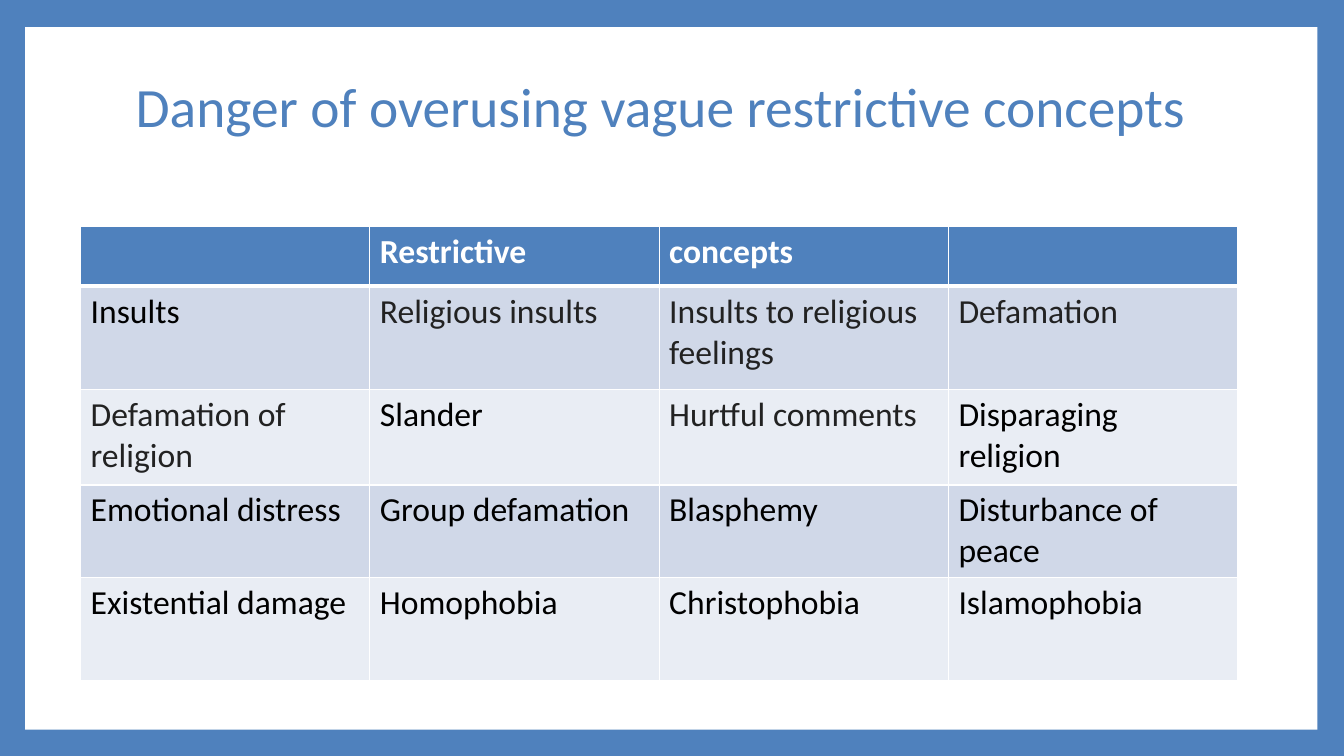
from dataclasses import dataclass

from lxml.etree import SubElement
from pptx import Presentation
from pptx.dml.color import RGBColor
from pptx.enum.shapes import MSO_SHAPE
from pptx.enum.text import MSO_ANCHOR, PP_ALIGN
from pptx.oxml.ns import qn
from pptx.slide import Slide
from pptx.table import _Cell
from pptx.util import Pt

BLUE = RGBColor(0x4F, 0x81, 0xBD)
WHITE = RGBColor(0xFF, 0xFF, 0xFF)
BLACK = RGBColor(0x00, 0x00, 0x00)
CHARCOAL = RGBColor(0x22, 0x22, 0x22)
BAND_DARK = RGBColor(0xD0, 0xD8, 0xE8)
BAND_LIGHT = RGBColor(0xE9, 0xED, 0xF4)
FONT = "Calibri"
COLUMN_WIDTH = 206.64


@dataclass(frozen=True)
class ConceptRow:
    height: float
    fill: RGBColor
    concepts: tuple[str, ...]


ROWS = (
    ConceptRow(42.5, BLUE, ("", "Restrictive", "concepts", "")),
    ConceptRow(74, BAND_DARK, ("Insults", "Religious insults",
                               "Insults to religious feelings", "Defamation")),
    ConceptRow(68, BAND_LIGHT, ("Defamation of religion", "Slander",
                                "Hurtful comments", "Disparaging religion")),
    ConceptRow(66, BAND_DARK, ("Emotional distress", "Group defamation",
                               "Blasphemy", "Disturbance of peace")),
    ConceptRow(74, BAND_LIGHT, ("Existential damage", "Homophobia",
                                "Christophobia", "Islamophobia")),
)
CHARCOAL_CONCEPTS = {
    "Religious insults", "Insults to religious feelings", "Defamation",
    "Defamation of religion", "Hurtful comments",
}


def add_title(page: Slide) -> None:
    title = page.shapes.title
    title.left, title.top = Pt(90), Pt(48)
    title.width, title.height = Pt(777.6), Pt(106.6)
    frame = title.text_frame
    frame.text = "Danger of overusing vague restrictive concepts"
    frame.word_wrap = True
    frame.vertical_anchor = MSO_ANCHOR.MIDDLE
    frame.margin_left, frame.margin_right = Pt(0), Pt(14)
    frame.margin_bottom = Pt(50)
    para = frame.paragraphs[0]
    para.alignment = PP_ALIGN.CENTER
    para.line_spacing = 0.9
    para.font.name = FONT
    para.font.size = Pt(39.6)
    para.font.color.rgb = BLUE


def add_panel(page: Slide) -> None:
    panel = page.shapes.add_shape(
        MSO_SHAPE.RECTANGLE, Pt(18), Pt(19.4), Pt(923), Pt(501.8))
    panel.shadow.inherit = False
    panel.fill.solid()
    panel.fill.fore_color.rgb = WHITE
    panel.line.fill.background()
    page.shapes.title.element.addprevious(panel.element)


def set_borders(cell: _Cell, top: float, bottom: float) -> None:
    properties = cell._tc.get_or_add_tcPr()
    for side, width in (("L", 1), ("R", 1), ("T", top), ("B", bottom)):
        line = SubElement(properties, qn(f"a:ln{side}"), w=str(Pt(width)))
        fill = SubElement(line, qn("a:solidFill"))
        SubElement(fill, qn("a:srgbClr"), val=str(WHITE))


def fill_cell(cell: _Cell, concept: str, row_index: int) -> None:
    is_header = row_index == 0
    set_borders(cell, 3 if row_index == 1 else 1, 3 if is_header else 1)
    cell.fill.solid()
    cell.fill.fore_color.rgb = ROWS[row_index].fill
    cell.text = concept
    font = cell.text_frame.paragraphs[0].font
    font.name = FONT
    font.size = Pt(24)
    font.bold = is_header
    if is_header:
        font.color.rgb = WHITE
    else:
        font.color.rgb = CHARCOAL if concept in CHARCOAL_CONCEPTS else BLACK


def add_concept_table(page: Slide) -> None:
    column_count = len(ROWS[0].concepts)
    table = page.shapes.add_table(
        len(ROWS), column_count, Pt(57.6), Pt(162),
        Pt(COLUMN_WIDTH * column_count), Pt(sum(row.height for row in ROWS)),
    ).table
    for column in table.columns:
        column.width = Pt(COLUMN_WIDTH)
    for row_index, row in enumerate(ROWS):
        table.rows[row_index].height = Pt(row.height)
        for column_index, concept in enumerate(row.concepts):
            fill_cell(table.cell(row_index, column_index), concept, row_index)


def main() -> None:
    deck = Presentation()
    deck.slide_width, deck.slide_height = Pt(960), Pt(540)
    page = deck.slides.add_slide(deck.slide_layouts.get_by_name("Title Only"))
    page.background.fill.solid()
    page.background.fill.fore_color.rgb = BLUE
    add_title(page)
    add_panel(page)
    add_concept_table(page)
    deck.save("out.pptx")


if __name__ == "__main__":
    main()
